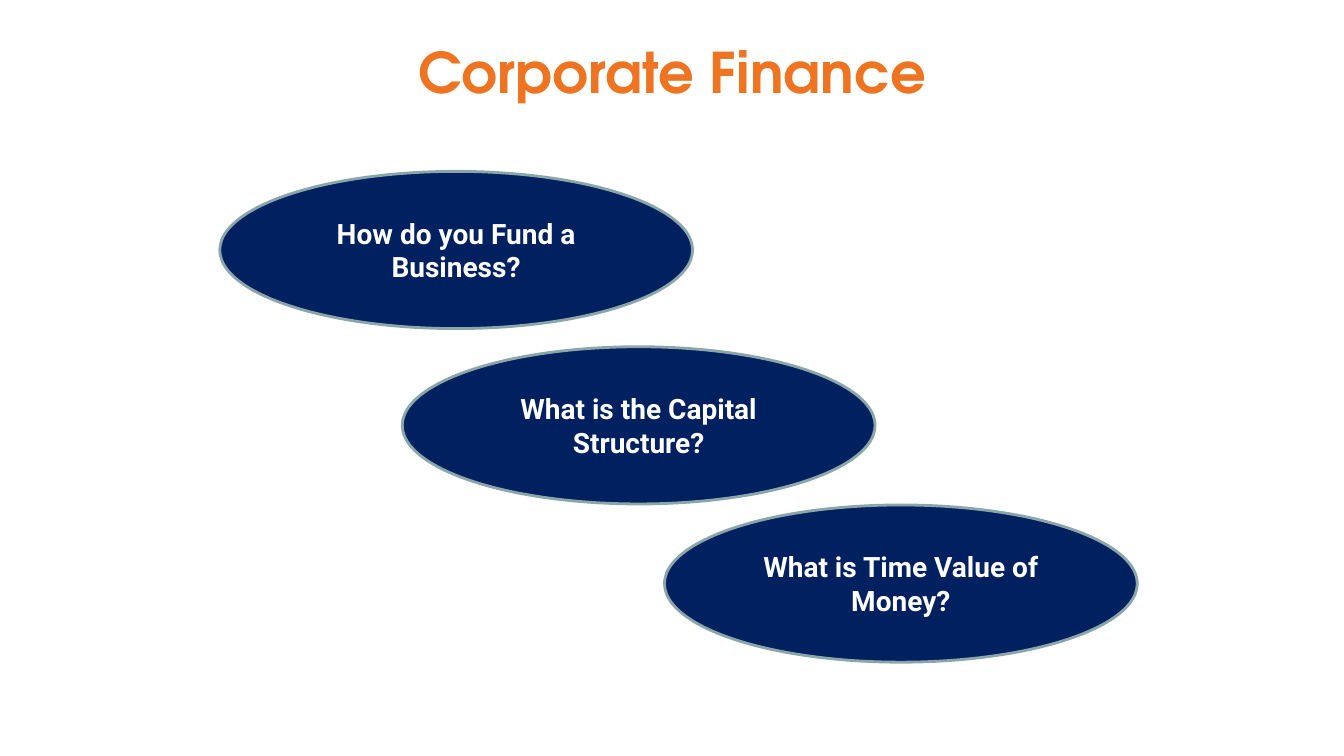
import dataclasses

import pptx
import pptx.dml.color
import pptx.enum.shapes
import pptx.enum.text
import pptx.util

SLIDE_WIDTH = pptx.util.Inches(13.33)
SLIDE_HEIGHT = pptx.util.Inches(7.5)
COLORS = {"title": "EE7421", "navy": "002060", "outline": "8AA6A8", "white": "FFFFFF"}
OVAL_WIDTH = 35.18
OVAL_HEIGHT = 20.8


@dataclasses.dataclass(frozen=True)
class Question:
    text: str
    left: float
    top: float


QUESTIONS = [
    Question("How do you Fund a Business?", 16.35, 22.67),
    Question("What is the Capital Structure?", 29.93, 45.87),
    Question("What is Time Value of Money?", 49.44, 66.8),
]


def across(percent: float) -> int:
    return round(SLIDE_WIDTH * percent / 100)


def down(percent: float) -> int:
    return round(SLIDE_HEIGHT * percent / 100)


def color(name: str) -> pptx.dml.color.RGBColor:
    return pptx.dml.color.RGBColor.from_string(COLORS[name])


def write_centered(
    frame: pptx.text.text.TextFrame, text: str, font_name: str, size: float, color_name: str
) -> None:
    frame.word_wrap = True
    frame.auto_size = pptx.enum.text.MSO_AUTO_SIZE.NONE
    frame.vertical_anchor = pptx.enum.text.MSO_ANCHOR.MIDDLE
    paragraph = frame.paragraphs[0]
    paragraph.alignment = pptx.enum.text.PP_ALIGN.CENTER
    run = paragraph.add_run()
    run.text = text
    run.font.name = font_name
    run.font.size = pptx.util.Pt(size)
    run.font.bold = True
    run.font.color.rgb = color(color_name)


def add_title(slide: pptx.slide.Slide, text: str) -> None:
    title = slide.shapes.title
    title.left, title.top = across(12.5), down(0)
    title.width, title.height = across(75), down(18.93)
    frame = title.text_frame
    frame.margin_left = frame.margin_right = frame.margin_top = frame.margin_bottom = 0
    write_centered(frame, text, "TeX Gyre Adventor", 40, "title")


def add_question(slide: pptx.slide.Slide, question: Question) -> None:
    shape = slide.shapes.add_shape(
        pptx.enum.shapes.MSO_SHAPE.OVAL,
        across(question.left),
        down(question.top),
        across(OVAL_WIDTH),
        down(OVAL_HEIGHT),
    )
    shape.shadow.inherit = False
    shape.fill.solid()
    shape.fill.fore_color.rgb = color("navy")
    shape.line.color.rgb = color("outline")
    shape.line.width = pptx.util.Pt(2)
    write_centered(shape.text_frame, question.text, "Roboto", 20, "white")


def main() -> None:
    presentation = pptx.Presentation()
    presentation.slide_width = SLIDE_WIDTH
    presentation.slide_height = SLIDE_HEIGHT
    slide = presentation.slides.add_slide(presentation.slide_layouts.get_by_name("Title Only"))
    add_title(slide, "Corporate Finance")
    for question in QUESTIONS:
        add_question(slide, question)
    presentation.save("out.pptx")


if __name__ == "__main__":
    main()
